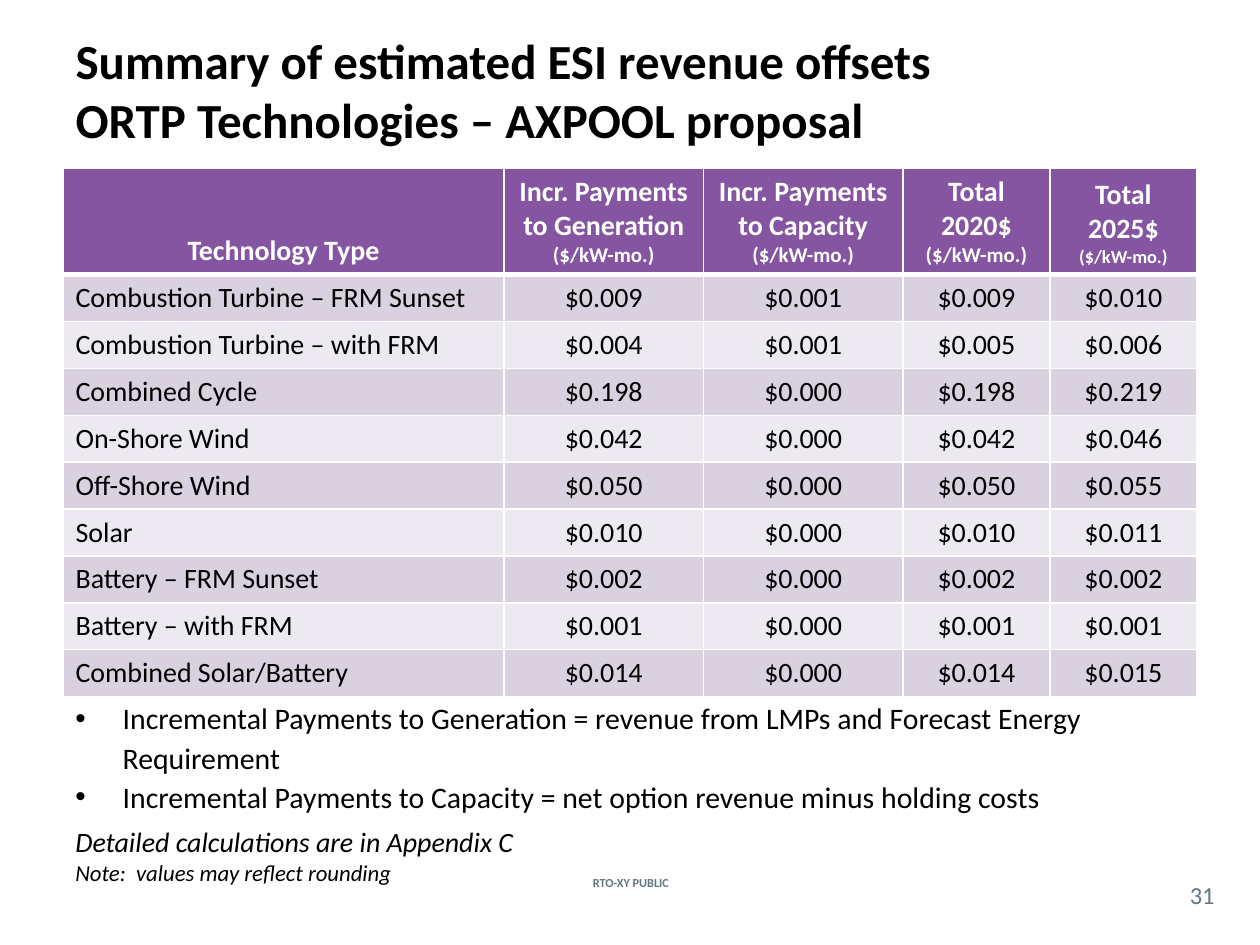
import pptx
import pptx.util
import pptx.dml.color
import pptx.enum.text
import pptx.oxml
import pptx.oxml.ns

Pt = pptx.util.Pt
RGBColor = pptx.dml.color.RGBColor
ALIGN = pptx.enum.text.PP_ALIGN
ANCHOR = pptx.enum.text.MSO_ANCHOR

BLACK = RGBColor(0x00, 0x00, 0x00)
WHITE = RGBColor(0xFF, 0xFF, 0xFF)
PURPLE = RGBColor(0x85, 0x55, 0xA1)
BANDS = (RGBColor(0xD9, 0xD1, 0xE0), RGBColor(0xED, 0xE9, 0xF0))
SLATE = RGBColor(0x62, 0x77, 0x7F)
FONT = "Calibri"

TITLE = ("Summary of estimated ESI revenue offsets ",
         "ORTP Technologies – AXPOOL proposal")
UNIT = "($/kW-mo.)"
# Each heading: lines as (text, size)
HEADINGS = [
    [("Technology Type", 16)],
    [("Incr. Payments to Generation", 16), (UNIT, 12)],
    [("Incr. Payments to Capacity", 16), (UNIT, 12)],
    [("Total", 16), ("2020$", 16), (UNIT, 12)],
    [("Total", 16), ("2025$", 16), (UNIT, 10.5)],
]
REVENUES = [
    ("Combustion Turbine – FRM Sunset", "$0.009", "$0.001", "$0.009", "$0.010"),
    ("Combustion Turbine – with FRM", "$0.004", "$0.001", "$0.005", "$0.006"),
    ("Combined Cycle", "$0.198", "$0.000", "$0.198", "$0.219"),
    ("On-Shore Wind", "$0.042", "$0.000", "$0.042", "$0.046"),
    ("Off-Shore Wind", "$0.050", "$0.000", "$0.050", "$0.055"),
    ("Solar", "$0.010", "$0.000", "$0.010", "$0.011"),
    ("Battery – FRM Sunset", "$0.002", "$0.000", "$0.002", "$0.002"),
    ("Battery – with FRM", "$0.001", "$0.000", "$0.001", "$0.001"),
    ("Combined Solar/Battery", "$0.014", "$0.000", "$0.014", "$0.015"),
]
BULLETS = [
    "Incremental Payments to Generation = revenue from LMPs and Forecast Energy Requirement",
    "Incremental Payments to Capacity = net option revenue minus holding costs",
]
REMARKS = [("Detailed calculations are in Appendix C", 16),
           ("Note:  values may reflect rounding", 13)]

LEFT, WIDTH = 36, 648
COLUMN_WIDTHS = (252, 114, 114, 84, 84)
HEADER_HEIGHT, ROW_HEIGHT = 60.5, 26
THIN, THICK = 1, 3


def format_font(font, size, color=BLACK, **values):
    values = {"name": FONT, "size": Pt(size), **values}
    for name, value in values.items():
        setattr(font, name, value)
    font.color.rgb = color


def write_lines(text_frame, lines, align, **values):
    """Write each (text, size) pair as one paragraph."""
    for index, (text, size) in enumerate(lines):
        paragraph = text_frame.paragraphs[0] if index == 0 else text_frame.add_paragraph()
        paragraph.alignment = align
        run = paragraph.add_run()
        run.text = text
        format_font(run.font, size, **values)


def add_text_box(slide, left, top, width, height, anchor, margin=None):
    text_frame = slide.shapes.add_textbox(Pt(left), Pt(top), Pt(width), Pt(height)).text_frame
    text_frame.word_wrap = True
    text_frame.vertical_anchor = anchor
    if margin is not None:
        for side in ("left", "top", "right", "bottom"):
            setattr(text_frame, f"margin_{side}", Pt(margin))
    return text_frame


def set_borders(cell, top, bottom):
    properties = cell._tc.get_or_add_tcPr()
    for side, width in (("L", THIN), ("R", THIN), ("T", top), ("B", bottom)):
        properties.append(pptx.oxml.parse_xml(
            f'<a:ln{side} {pptx.oxml.ns.nsdecls("a")} w="{Pt(width)}">'
            f'<a:solidFill><a:srgbClr val="{WHITE}"/></a:solidFill></a:ln{side}>'))


def fill_cell(cell, color, top, bottom):
    set_borders(cell, top, bottom)
    cell.fill.solid()
    cell.fill.fore_color.rgb = color


def add_revenue_table(slide):
    height = HEADER_HEIGHT + ROW_HEIGHT * len(REVENUES)
    table = slide.shapes.add_table(len(REVENUES) + 1, len(HEADINGS), Pt(LEFT), Pt(96),
                                   Pt(WIDTH), Pt(height)).table
    for column, width in zip(table.columns, COLUMN_WIDTHS):
        column.width = Pt(width)
    for index, row in enumerate(table.rows):
        row.height = Pt(ROW_HEIGHT if index else HEADER_HEIGHT)

    for column, lines in enumerate(HEADINGS):
        cell = table.cell(0, column)
        fill_cell(cell, PURPLE, THIN, THICK)
        cell.vertical_anchor = ANCHOR.BOTTOM
        write_lines(cell.text_frame, lines, ALIGN.CENTER, color=WHITE, bold=True)

    for row, values in enumerate(REVENUES, start=1):
        for column, text in enumerate(values):
            cell = table.cell(row, column)
            fill_cell(cell, BANDS[(row - 1) % 2], THICK if row == 1 else THIN, THIN)
            write_lines(cell.text_frame, [(text, 16)],
                        ALIGN.CENTER if column else ALIGN.LEFT, bold=False)


def add_notes_below_table(slide):
    text_frame = add_text_box(slide, LEFT, 394.5, WIDTH, 120, ANCHOR.TOP)
    write_lines(text_frame, [(text, 17) for text in BULLETS], ALIGN.LEFT)
    for paragraph in text_frame.paragraphs:
        paragraph.line_spacing = 1.1
        properties = paragraph._p.get_or_add_pPr()
        properties.set("marL", str(Pt(27)))
        properties.set("indent", str(Pt(-27)))
        properties.append(pptx.oxml.parse_xml(
            f'<a:buFont {pptx.oxml.ns.nsdecls("a")} typeface="Arial"/>'))
        properties.append(pptx.oxml.parse_xml(
            f'<a:buChar {pptx.oxml.ns.nsdecls("a")} char="•"/>'))

    paragraph = text_frame.add_paragraph()
    paragraph.space_before = Pt(6)
    for index, (text, size) in enumerate(REMARKS):
        if index:
            paragraph.add_line_break()
        run = paragraph.add_run()
        run.text = text
        format_font(run.font, size, italic=True)


def add_title(slide):
    title = slide.shapes.title
    title.left, title.top, title.width, title.height = Pt(LEFT), Pt(6), Pt(WIDTH), Pt(90)
    title.text_frame.vertical_anchor = ANCHOR.MIDDLE
    title.text_frame.word_wrap = True
    paragraph = title.text_frame.paragraphs[0]
    paragraph.alignment = ALIGN.LEFT
    for index, line in enumerate(TITLE):
        if index:
            paragraph.add_line_break()
        run = paragraph.add_run()
        run.text = line
        format_font(run.font, 28, bold=True)


def main():
    presentation = pptx.Presentation()
    presentation.slide_width, presentation.slide_height = Pt(720), Pt(540)
    slide = presentation.slides.add_slide(presentation.slide_layouts[5])

    add_title(slide)
    add_revenue_table(slide)
    add_notes_below_table(slide)

    marking = add_text_box(slide, 307.5, 498.5, 106, 12, ANCHOR.MIDDLE)
    write_lines(marking, [("RTO-XY PUBLIC", 7)], ALIGN.CENTER, color=SLATE, bold=True)
    page_number = add_text_box(slide, 672, 501, 30, 21, ANCHOR.MIDDLE, margin=0)
    write_lines(page_number, [("31", 14)], ALIGN.CENTER, color=SLATE)

    presentation.save("out.pptx")


if __name__ == "__main__":
    main()
